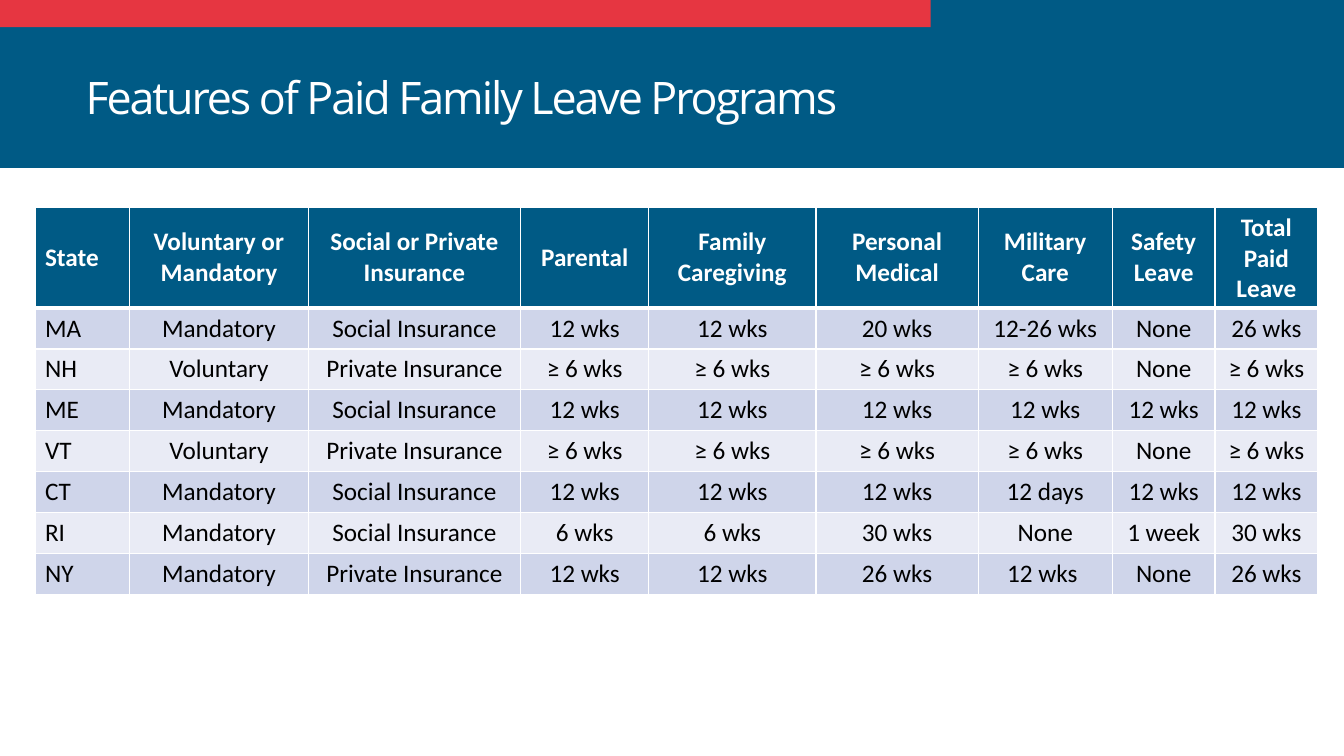
import pptx
import pptx.util
import pptx.dml.color
import pptx.enum.shapes
import pptx.enum.text
import pptx.oxml
import pptx.oxml.ns
import lxml.etree

Pt = pptx.util.Pt
RGB = pptx.dml.color.RGBColor
ALIGN = pptx.enum.text.PP_ALIGN
MIDDLE = pptx.enum.text.MSO_ANCHOR.MIDDLE
qn = pptx.oxml.ns.qn

BLUE = RGB(0x00, 0x5A, 0x85)
RED = RGB(0xE6, 0x36, 0x41)
WHITE = RGB(0xFF, 0xFF, 0xFF)
BLACK = RGB(0x00, 0x00, 0x00)
DARK = RGB(0xCF, 0xD5, 0xEA)
LIGHT = RGB(0xE9, 0xEB, 0xF5)

WIDTHS = [67.7, 127.4, 151.9, 91.4, 119.5, 115.9, 95.8, 73.4, 73.4]
HEAD = ["State", "Voluntary or Mandatory", "Social or Private Insurance",
        "Parental", "Family Caregiving", "Personal Medical",
        "Military Care", "Safety Leave", "Total Paid Leave"]
MUST, MAY = "Mandatory", "Voluntary"
SOCIAL, PRIVATE = "Social Insurance", "Private Insurance"
STATES = [
    ["MA", MUST, SOCIAL, "12 wks", "12 wks", "20 wks", "12-26 wks", "None", "26 wks"],
    ["NH", MAY, PRIVATE, "≥ 6 wks", "≥ 6 wks", "≥ 6 wks", "≥ 6 wks", "None", "≥ 6 wks"],
    ["ME", MUST, SOCIAL, "12 wks", "12 wks", "12 wks", "12 wks", "12 wks", "12 wks"],
    ["VT", MAY, PRIVATE, "≥ 6 wks", "≥ 6 wks", "≥ 6 wks", "≥ 6 wks", "None", "≥ 6 wks"],
    ["CT", MUST, SOCIAL, "12 wks", "12 wks", "12 wks", "12 days", "12 wks", "12 wks"],
    ["RI", MUST, SOCIAL, "6 wks", "6 wks", "30 wks", "None", "1 week", "30 wks"],
    ["NY", MUST, PRIVATE, "12 wks", "12 wks", "26 wks", "12 wks ", "None", "26 wks"],
]


class Deck:
    title_font = "Open Sans"
    body_font = "Calibri"

    def __init__(self, wide, high):
        self.show = pptx.Presentation()
        self.show.slide_width, self.show.slide_height = Pt(wide), Pt(high)
        self.slide = self.show.slides.add_slide(self.show.slide_layouts[6])

    def band(self, wide, high, color):
        """Draw a plain bar from the top left corner."""
        kind = pptx.enum.shapes.MSO_SHAPE.RECTANGLE
        bar = self.slide.shapes.add_shape(kind, 0, 0, Pt(wide), Pt(high))
        bar.shadow.inherit = False
        bar.fill.solid()
        bar.fill.fore_color.rgb = color
        bar.line.fill.background()

    def text(self, para, words, name, size, color, bold=False):
        run = para.add_run()
        run.text = words
        font = run.font
        font.name, font.size, font.bold = name, Pt(size), bold
        font.color.rgb = color
        return run

    def title(self, words, left, top, wide, high):
        box = self.slide.shapes.add_textbox(Pt(left), Pt(top), Pt(wide), Pt(high))
        frame = box.text_frame
        frame.word_wrap = True
        frame.vertical_anchor = MIDDLE
        para = frame.paragraphs[0]
        para.line_spacing = 0.9
        run = self.text(para, words, self.title_font, 32, WHITE)
        run.font._element.set("spc", "-150")

    def edge(self, cell, side, width):
        """Add a white border to one side (L, R, T or B) of a cell."""
        props = cell._tc.get_or_add_tcPr()
        line = lxml.etree.SubElement(props, qn("a:ln" + side), w=str(Pt(width)))
        fill = lxml.etree.SubElement(line, qn("a:solidFill"))
        lxml.etree.SubElement(fill, qn("a:srgbClr"), val=str(WHITE))

    def cell(self, cell, words, row, col):
        head = row == 0
        rule = {"L": 1, "R": 1, "T": 3 if row == 1 else 1, "B": 3 if head else 1}
        for side, width in rule.items():
            self.edge(cell, side, width)
        cell.fill.solid()
        cell.fill.fore_color.rgb = BLUE if head else DARK if row % 2 else LIGHT
        if head:
            cell.vertical_anchor = MIDDLE
        para = cell.text_frame.paragraphs[0]
        para.alignment = ALIGN.CENTER if col else ALIGN.LEFT
        self.text(para, words, self.body_font, 18, WHITE if head else BLACK, head)

    def table(self, rows, widths, left, top, first, rest):
        """Draw a table whose first row has its own height."""
        high = first + rest * (len(rows) - 1)
        grid = self.slide.shapes.add_table(
            len(rows), len(widths), Pt(left), Pt(top), Pt(sum(widths)), Pt(high)).table
        for col, width in enumerate(widths):
            grid.columns[col].width = Pt(width)
        for row, texts in enumerate(rows):
            grid.rows[row].height = Pt(rest if row else first)
            for col, words in enumerate(texts):
                self.cell(grid.cell(row, col), words, row, col)


def main():
    deck = Deck(960, 540)
    deck.band(960, 120, BLUE)
    deck.band(664.8, 19.4, RED)
    deck.title("Features of Paid Family Leave Programs", 54, 19.4, 574, 104.4)
    deck.table([HEAD] + STATES, WIDTHS, 25, 148, 72, 29.2)
    deck.show.save("out.pptx")


if __name__ == "__main__":
    main()
